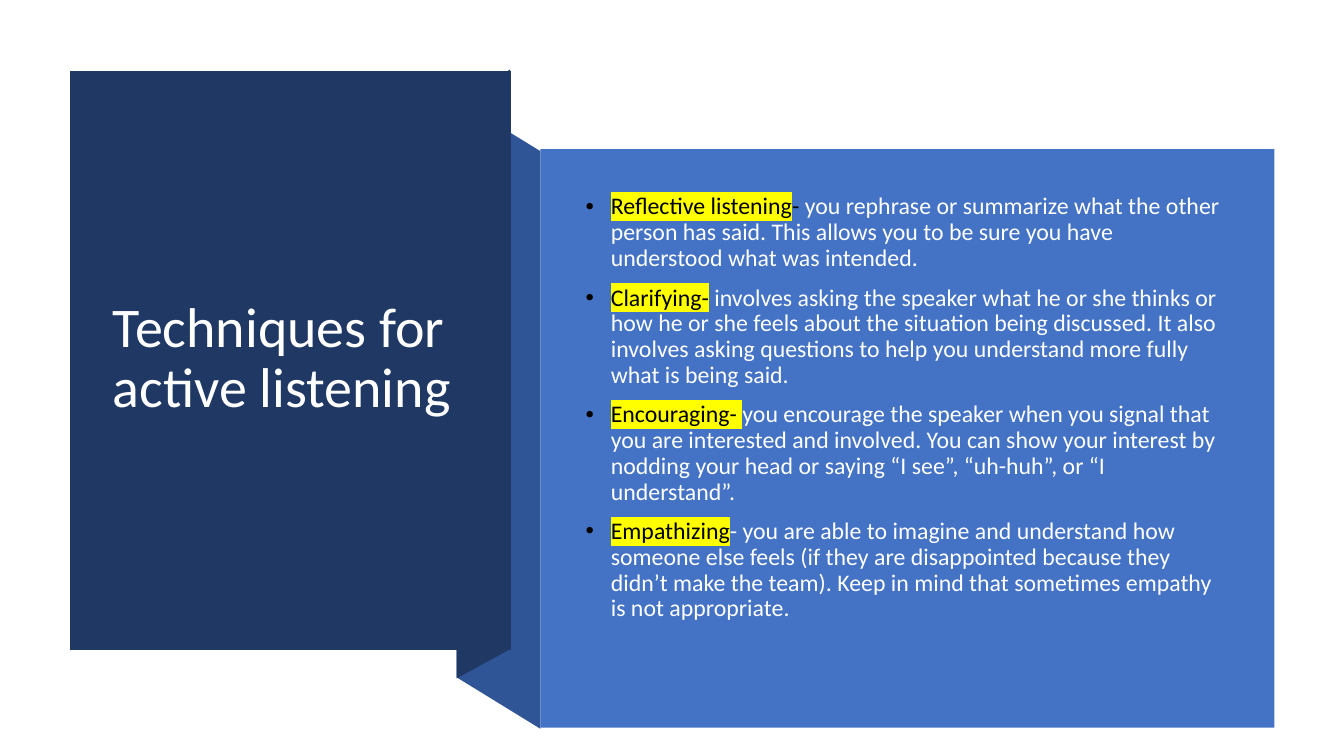
"""Build the slide on techniques for active listening."""
from lxml import etree
from pptx import Presentation
from pptx import util as u
from pptx.dml.color import RGBColor
from pptx.enum import shapes, text
from pptx.oxml.ns import qn

NAVY, FOLD_BLUE, PANEL_BLUE = "203864", "2F5597", "4472C4"
WHITE, OFF_WHITE, BLACK, YELLOW = "FFFFFF", "FEFFFF", "000000", "FFFF00"


def paint(fill, color):
    fill.solid()
    fill.fore_color.rgb = RGBColor.from_string(color)


def add_span(para, words, size, color, highlight=None):
    span = para.add_run()
    span.text = words
    span.font.size = u.Pt(size)
    span.font.name = "Calibri"
    paint(span.font.fill, color)
    if highlight:
        mark = etree.Element(qn("a:highlight"))
        etree.SubElement(mark, qn("a:srgbClr"), val=highlight)
        span.font._element.find(qn("a:solidFill")).addnext(mark)


deck = Presentation()
deck.slide_width, deck.slide_height = u.Inches(13.33), u.Inches(7.5)
page = deck.slides.add_slide(deck.slide_layouts[6])

ribbon = [
    (FOLD_BLUE, [(5.36, 7.23), (4.53, 6.72), (4.53, 0.99), (5.36, 1.5)]),
    (NAVY, [(5.06, 6.44), (4.53, 6.73), (4.53, 0.98), (5.06, 0.69)]),
    (NAVY, [(0.69, 0.7), (5.07, 0.7), (5.07, 6.45), (0.69, 6.45)]),
]
for color, corners in ribbon:
    points = [(u.Inches(x), u.Inches(y)) for x, y in corners]
    builder = page.shapes.build_freeform(*points[0])
    builder.add_line_segments(points[1:], close=True)
    face = builder.convert_to_shape()
    face.shadow.inherit = False
    paint(face.fill, color)
    face.line.fill.background()

panel = page.shapes.add_shape(
    shapes.MSO_SHAPE.RECTANGLE, u.Inches(5.36), u.Inches(1.48), u.Inches(7.28), u.Inches(5.74))
panel.shadow.inherit = False
paint(panel.fill, PANEL_BLUE)
panel.line.fill.background()

title = page.shapes.add_textbox(u.Inches(1.02), u.Inches(1.07), u.Inches(3.71), u.Inches(4.99))
body = page.shapes.add_textbox(u.Inches(5.71), u.Inches(1.88), u.Inches(6.51), u.Inches(4.74))
for box in (title, body):
    box.text_frame.word_wrap = True
    box.text_frame.vertical_anchor = text.MSO_ANCHOR.MIDDLE
body.text_frame.margin_bottom = u.Inches(0.45)

heading = title.text_frame.paragraphs[0]
heading.line_spacing = 0.9
add_span(heading, "Techniques for active listening", 40, WHITE)

techniques = [
    [("Reflective listening", BLACK, YELLOW), ("- ", BLACK, None),
     ("you rephrase or summarize what the other person has said. This allows you to be sure "
      "you have understood what was intended.", OFF_WHITE, None)],
    [("Clarifying-", BLACK, YELLOW),
     (" involves asking the speaker what he or she thinks or how he or she feels about the "
      "situation being discussed. It also involves asking questions to help you understand "
      "more fully what is being said.", OFF_WHITE, None)],
    [("Encouraging- ", BLACK, YELLOW),
     ("you encourage the speaker when you signal that you are interested and involved. You "
      "can show your interest by nodding your head or saying “I see”, “uh-huh”, or “I "
      "understand”.", OFF_WHITE, None)],
    [("Empathizing", BLACK, YELLOW),
     ("- you are able to imagine and understand how someone else feels (if they are "
      "disappointed because they didn’t make the team). Keep in mind that sometimes empathy "
      "is not appropriate.", OFF_WHITE, None)],
]
for index, spans in enumerate(techniques):
    para = body.text_frame.add_paragraph() if index else body.text_frame.paragraphs[0]
    para.line_spacing = 0.9
    para.space_before = u.Pt(10)
    layout = para._p.get_or_add_pPr()
    layout.set("marL", str(u.Inches(0.25)))
    layout.set("indent", str(u.Inches(-0.25)))
    etree.SubElement(layout, qn("a:buFont"), typeface="Arial")
    etree.SubElement(layout, qn("a:buChar"), char="•")
    for words, color, highlight in spans:
        add_span(para, words, 17, color, highlight)

deck.save("out.pptx")
